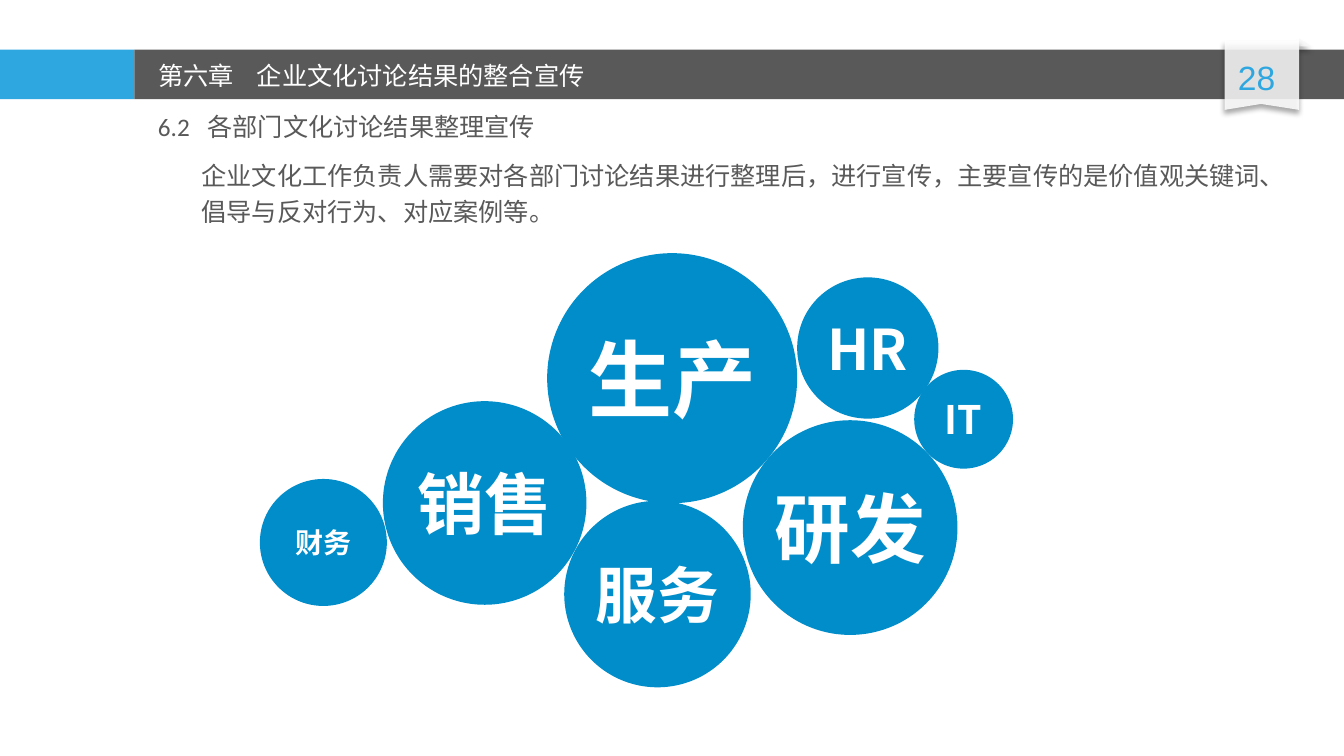
"""Build the slide on publicising the culture discussion results."""
from lxml import etree
from pptx import Presentation
from pptx.dml.color import RGBColor
from pptx.enum import shapes, text
from pptx.oxml.ns import qn
from pptx.util import Cm, Pt

SANS = "Noto Sans CJK SC"
BLUE, GREY, WHITE, DISC = "2EA7E0", "595959", "FFFFFF", "008DCA"
BARS = [(0, 3.39, BLUE), (3.39, 30.48, GREY)]
FLAG = [(30.86, 2.77), (30.86, 1.02), (32.74, 1.02), (32.74, 2.77), (31.78, 2.62)]
FOLD = (32.74, 0.97, 0.3, 0.2)
HEAD = ("第六章\t企业文化讨论结果的整合宣传", (3.73, 1.4, 12.8, 1.02), 2.49)
NOTES = [
    ("28", (30.73, 1.3, 1.88, 1.27), 24, "Arial", BLUE, None),
    ("6.2\t各部门文化讨论结果整理宣传", (3.73, 2.69, 13.49, 1.02), 18, "Calibri", GREY, 1.25),
    ("企业文化工作负责人需要对各部门讨论结果进行整理后，进行宣传，"
     "主要宣传的是价值观关键词、倡导与反对行为、对应案例等。",
     (4.83, 3.76, 27.91, 2.08), 18, SANS, GREY, None),
]
DISCS = [
    ("生产", 13.79, 6.38, 6.3, 60),
    ("研发", 18.72, 10.59, 5.41, 54),
    ("服务", 14.22, 12.62, 4.7, 44),
    ("销售", 9.65, 10.11, 5.13, 48),
    ("HR", 20.09, 6.99, 3.56, 40),
    ("财务", 6.55, 12.07, 3.2, 20),
    ("IT", 23.04, 9.32, 2.49, 28),
]


def rgb(code):
    return RGBColor.from_string(code)


def sub(node, tag, **attrs):
    return etree.SubElement(node, qn(tag), attrs)


def paint(shape, code):
    shape.shadow.inherit = False
    shape.fill.solid()
    shape.fill.fore_color.rgb = rgb(code)
    shape.line.fill.background()


def veil(shape, code):
    paint(shape, code)
    props = shape._element.spPr
    sub(props.find(".//" + qn("a:srgbClr")), "a:alpha", val="85000")
    glow = sub(props.find(qn("a:effectLst")), "a:outerShdw", blurRad=str(Pt(4)),
               dist=str(Pt(3)), dir="5400000", algn="t", rotWithShape="0")
    sub(sub(glow, "a:srgbClr", val="000000"), "a:alpha", val="40000")


def write(shape, words, size, font, code, bold=False, stop=None,
          align=text.PP_ALIGN.LEFT, anchor=text.MSO_ANCHOR.TOP):
    frame = shape.text_frame
    frame.word_wrap = True
    frame.vertical_anchor = anchor
    para = frame.paragraphs[0]
    para.alignment = align
    if stop:
        tabs = sub(para._p.get_or_add_pPr(), "a:tabLst")
        sub(tabs, "a:tab", pos=str(Cm(stop)), algn="l")
    run = para.add_run()
    run.text = words
    run.font.size, run.font.bold, run.font.name = Pt(size), bold, font
    run.font.color.rgb = rgb(code)
    sub(run._r.get_or_add_rPr(), "a:ea", typeface=SANS)
    return para


def main():
    deck = Presentation()
    deck.slide_width, deck.slide_height = Cm(33.87), Cm(19.05)
    slide = deck.slides.add_slide(deck.slide_layouts[5])
    parts = slide.shapes
    kind = shapes.MSO_SHAPE

    for left, width, code in BARS:
        bar = parts.add_shape(kind.RECTANGLE, Cm(left), Cm(1.25), Cm(width), Cm(1.25))
        paint(bar, code)
    fold = parts.add_shape(kind.RIGHT_TRIANGLE, *map(Cm, FOLD))
    veil(fold, "F8F8F8")
    dots = [(Cm(x), Cm(y)) for x, y in FLAG]
    pen = parts.build_freeform(*dots[0])
    pen.add_line_segments(dots[1:], close=True)
    veil(pen.convert_to_shape(), WHITE)

    words, place, stop = HEAD
    title = parts.title
    title.left, title.top, title.width, title.height = map(Cm, place)
    parts._spTree.append(title._element)
    write(title, words, 18, SANS, WHITE, stop=stop)

    for words, place, size, font, code, stop in NOTES:
        box = parts.add_textbox(*map(Cm, place))
        para = write(box, words, size, font, code, stop=stop)
        if size == 24:
            para.alignment = text.PP_ALIGN.CENTER
    para.line_spacing = 1.2

    for words, left, top, side, size in DISCS:
        disc = parts.add_shape(kind.OVAL, Cm(left), Cm(top), Cm(side), Cm(side))
        paint(disc, DISC)
        frame = disc.text_frame
        frame.margin_left = frame.margin_right = 0
        frame.margin_top = frame.margin_bottom = 0
        write(disc, words, size, SANS, WHITE, bold=True,
              align=text.PP_ALIGN.CENTER, anchor=text.MSO_ANCHOR.MIDDLE)

    deck.save("out.pptx")


if __name__ == "__main__":
    main()
